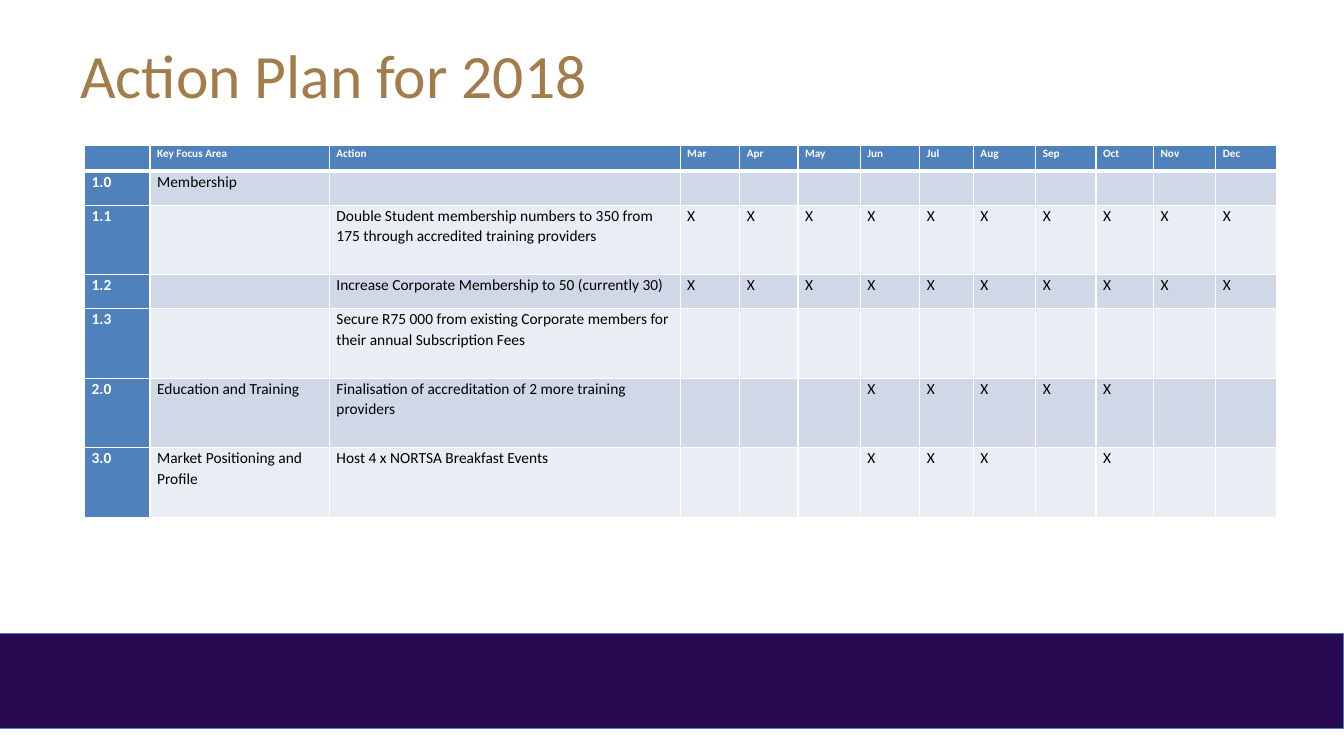
from lxml import etree
from pptx import Presentation
from pptx.dml.color import RGBColor
from pptx.enum.shapes import MSO_SHAPE
from pptx.enum.text import MSO_ANCHOR
from pptx.oxml.ns import qn
from pptx.util import Cm, Pt

RECTANGLE = MSO_SHAPE.RECTANGLE
TOP = MSO_ANCHOR.TOP

FONT = "Calibri"
WHITE, BLACK = "FFFFFF", "000000"
GOLD, PURPLE, BAND_EDGE = "A27C4A", "270A52", "4B7EBC"
HEADER_BLUE, ROW_TINTS = "4F81BD", ("D0D8E8", "E9EDF4")

TITLE = "Action Plan for 2018"
MONTHS = ["Mar", "Apr", "May", "Jun", "Jul", "Aug", "Sep", "Oct", "Nov", "Dec"]
HEADINGS = ["", "Key Focus Area", "Action"] + MONTHS
# number, focus area, action, active months, row height in cm
PLAN = [
    ("1.0", "Membership", "", [], 0.86),
    ("1.1", "", "Double Student membership numbers to 350 from 175 through "
     "accredited training providers", MONTHS, 1.75),
    ("1.2", "", "Increase Corporate Membership to 50 (currently 30)", MONTHS, 0.86),
    ("1.3", "", "Secure R75 000 from existing Corporate members for their annual "
     "Subscription Fees", [], 1.75),
    ("2.0", "Education and Training", "Finalisation of accreditation of 2 more "
     "training providers", ["Jun", "Jul", "Aug", "Sep", "Oct"], 1.75),
    ("3.0", "Market Positioning and Profile", "Host 4 x NORTSA Breakfast Events",
     ["Jun", "Jul", "Aug", "Oct"], 1.75),
]
COLUMN_WIDTHS = [1.65, 4.52, 8.84, 1.5, 1.47, 1.57, 1.5, 1.35, 1.57, 1.52, 1.45,
                 1.57, 1.52]
HEADER_HEIGHT = 0.64


def colour(value):
    return RGBColor.from_string(value)


def add_span(para, text, size, ink, bold=False):
    span = para.add_run()
    span.text = text
    span.font.name = FONT
    span.font.size = Pt(size)
    span.font.bold = bold
    span.font.color.rgb = colour(ink)


def add_borders(cell, widths):
    """Draw white borders; widths maps each side's letter to points."""
    properties = cell._tc.get_or_add_tcPr()
    for side, width in widths.items():
        line = etree.SubElement(properties, qn(f"a:ln{side}"), w=str(Pt(width)))
        fill = etree.SubElement(line, qn("a:solidFill"))
        etree.SubElement(fill, qn("a:srgbClr"), val=WHITE)


def fill_cell(cell, text, row, column):
    is_header = row == 0
    is_label = is_header or column == 0
    size = 8 if is_header else 11
    cell.margin_left = cell.margin_right = Cm(0.18)
    cell.margin_top = cell.margin_bottom = 0
    cell.vertical_anchor = TOP
    add_borders(cell, {"L": 1, "R": 1, "T": 3 if row == 1 else 1,
                       "B": 3 if is_header else 1})
    cell.fill.solid()
    cell.fill.fore_color.rgb = colour(
        HEADER_BLUE if is_label else ROW_TINTS[(row - 1) % 2])
    para = cell.text_frame.paragraphs[0]
    para.line_spacing = 1.07
    if text:
        add_span(para, text, size, WHITE if is_label else BLACK, is_label)
    else:
        # Keeps an empty cell from stretching its row
        etree.SubElement(para._p, qn("a:endParaRPr"), sz=str(size * 100))


def add_footer_band(page, deck):
    band = page.shapes.add_shape(RECTANGLE, 0, Cm(15.97), deck.slide_width, Cm(2.4))
    band.shadow.inherit = False
    band.fill.solid()
    band.fill.fore_color.rgb = colour(PURPLE)
    band.line.color.rgb = colour(BAND_EDGE)
    band.line.width = Pt(0.75)


def add_title(page):
    box = page.shapes.add_textbox(Cm(1.69), Cm(0.76), Cm(30.48), Cm(3.18))
    frame = box.text_frame
    frame.word_wrap = True
    frame.vertical_anchor = TOP
    frame.margin_left = frame.margin_right = Cm(0.33)
    frame.margin_top = frame.margin_bottom = Cm(0.17)
    add_span(frame.paragraphs[0], TITLE, 44, GOLD)


def add_plan(page):
    rows = [HEADINGS]
    for number, area, action, active, _ in PLAN:
        rows.append([number, area, action]
                    + ["X" if month in active else "" for month in MONTHS])
    heights = [HEADER_HEIGHT] + [entry[-1] for entry in PLAN]
    table = page.shapes.add_table(
        len(rows), len(HEADINGS), Cm(2.13), Cm(3.67),
        Cm(sum(COLUMN_WIDTHS)), Cm(sum(heights))).table
    table.first_row = table.horz_banding = False
    for column, width in zip(table.columns, COLUMN_WIDTHS):
        column.width = Cm(width)
    for row, (height, texts) in enumerate(zip(heights, rows)):
        table.rows[row].height = Cm(height)
        for column, text in enumerate(texts):
            fill_cell(table.cell(row, column), text, row, column)


def main():
    deck = Presentation()
    deck.slide_width, deck.slide_height = Cm(33.87), Cm(19.05)
    page = deck.slides.add_slide(deck.slide_layouts[6])
    add_footer_band(page, deck)
    add_title(page)
    add_plan(page)
    deck.save("out.pptx")


if __name__ == "__main__":
    main()
